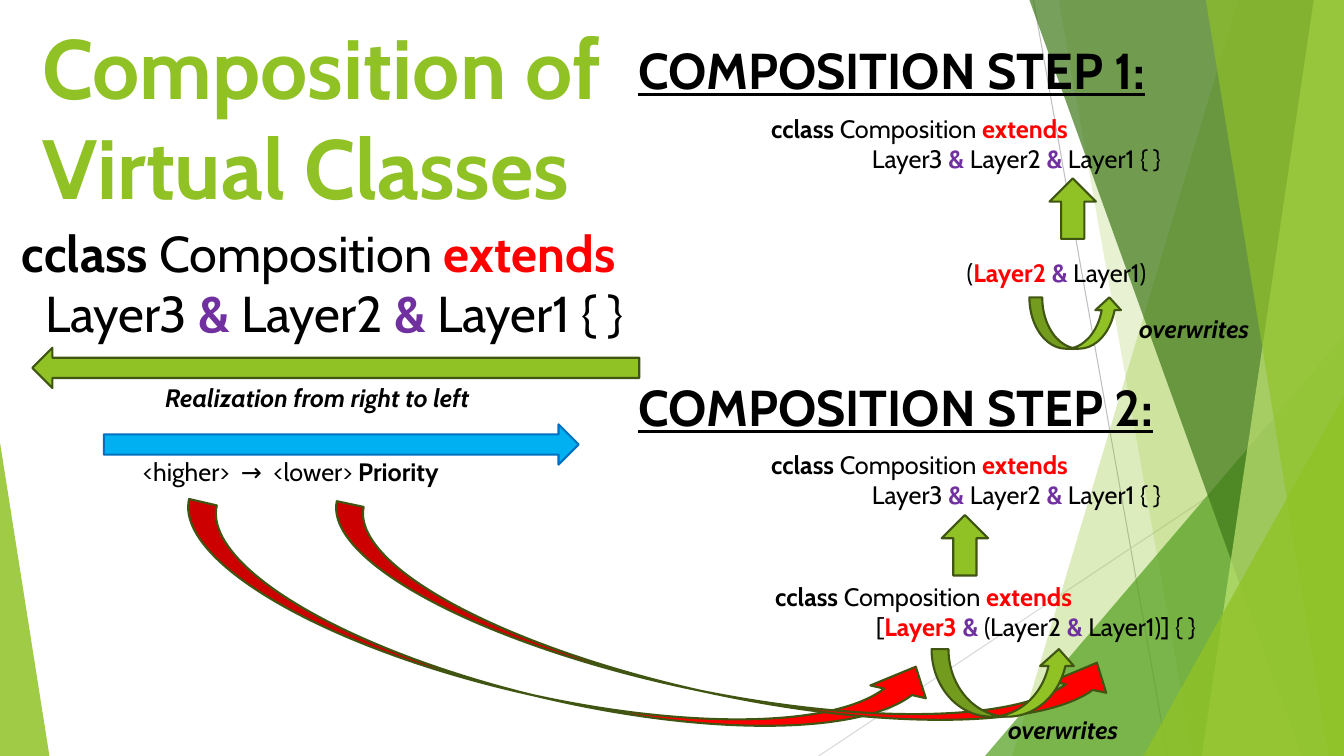
from dataclasses import dataclass

from lxml import etree
from pptx import Presentation
from pptx.dml.color import RGBColor
from pptx.enum.shapes import MSO_CONNECTOR, MSO_SHAPE
from pptx.enum.text import MSO_ANCHOR, MSO_AUTO_SIZE, PP_ALIGN
from pptx.oxml.ns import qn
from pptx.util import Inches, Pt

STRAIGHT = MSO_CONNECTOR.STRAIGHT
TRIANGLE = MSO_SHAPE.ISOSCELES_TRIANGLE
LEFT_ARROW = MSO_SHAPE.LEFT_ARROW
RIGHT_ARROW = MSO_SHAPE.RIGHT_ARROW
UP_ARROW = MSO_SHAPE.UP_ARROW
CURVED_ARROW = MSO_SHAPE.CURVED_UP_ARROW
TOP, LEFT = MSO_ANCHOR.TOP, PP_ALIGN.LEFT
FIT_SHAPE, NO_FIT = MSO_AUTO_SIZE.SHAPE_TO_FIT_TEXT, MSO_AUTO_SIZE.NONE

WIDTH, HEIGHT = 13.33, 7.5
TITLE_ONLY = 5


@dataclass(frozen=True)
class Theme:
    font: str = "Cabin"
    title_size: int = 60
    heading_size: int = 36
    body_size: int = 18
    green: str = "90C226"
    green_line: str = "3F5511"
    mid_green: str = "54A021"
    dark_green: str = "3F7819"
    pale_green: str = "C0E474"
    blue: str = "00B0F0"
    blue_line: str = "0070C0"
    red: str = "FF0000"
    purple: str = "7030A0"
    black: str = "000000"
    gray: str = "BFBFBF"
    light_gray: str = "D9D9D9"


THEME = Theme()

# Runs are (text, colour, bold)
AND = ("&", THEME.purple, True)
CLASS_LINE = [("cclass ", THEME.black, True), ("Composition ", THEME.black, False),
              ("extends", THEME.red, True)]
LAYERS_LINE = [("Layer3 ", THEME.black, False), AND, (" Layer2 ", THEME.black, False),
               AND, (" Layer1 { }", THEME.black, False)]
MERGED_LINE = [("[", THEME.black, False), ("Layer3 ", THEME.red, True),
               ("& ", THEME.purple, True), ("(Layer2 ", THEME.black, False), AND,
               (" Layer1)] { }", THEME.black, False)]
PAIR_LINE = [("(", THEME.black, False), ("Layer2 ", THEME.red, True), AND,
             (" Layer1)", THEME.black, False)]


def inches(*lengths):
    return [Inches(length) for length in lengths]


def add_runs(paragraph, runs, size, italic=False, underline=False):
    for text, color, bold in runs:
        run = paragraph.add_run()
        run.text = text
        font = run.font
        font.name, font.size, font.bold = THEME.font, Pt(size), bold
        font.italic, font.underline = italic, underline
        font.color.rgb = RGBColor.from_string(color)


def add_text(slide, box, lines, size=THEME.body_size, indent=0, **style):
    """Add a text box whose second and later lines are indented."""
    frame = slide.shapes.add_textbox(*inches(*box)).text_frame
    frame.word_wrap, frame.auto_size = True, FIT_SHAPE
    for index, runs in enumerate(lines):
        paragraph = frame.add_paragraph() if index else frame.paragraphs[0]
        if index and indent:
            paragraph._p.get_or_add_pPr().set("marL", str(Inches(indent)))
        add_runs(paragraph, runs, size, **style)


def add_arrow(slide, kind, box, fill=THEME.green, line=THEME.green_line, rotation=0):
    shape = slide.shapes.add_shape(kind, *inches(*box))
    shape.shadow.inherit = False
    shape.rotation = rotation
    shape.fill.solid()
    shape.fill.fore_color.rgb = RGBColor.from_string(fill)
    shape.line.color.rgb = RGBColor.from_string(line)
    shape.line.width = Pt(1.5)


# Background facets
def paint_glass(shape, color, opacity):
    shape.shadow.inherit = False
    shape.fill.solid()
    shape.fill.fore_color.rgb = RGBColor.from_string(color)
    shape.line.fill.background()
    color_element = shape.fill._xPr.find(qn("a:solidFill"))[0]
    etree.SubElement(color_element, qn("a:alpha")).set("val", str(opacity * 1000))


def add_ray(slide, start, end, color):
    ray = slide.shapes.add_connector(STRAIGHT, *inches(*start, *end))
    ray.line.color.rgb = RGBColor.from_string(color)
    ray.line.width = Pt(0.75)
    etree.SubElement(ray._element.spPr, qn("a:effectLst"))


def add_facet(slide, top_x, bottom_x, color, opacity):
    """Fill from a slanted left edge to the right side of the slide."""
    builder = slide.shapes.build_freeform(*inches(top_x, 0), scale=1.0)
    corners = [(WIDTH, 0), (WIDTH, HEIGHT), (bottom_x, HEIGHT)]
    builder.add_line_segments([inches(*corner) for corner in corners], close=True)
    paint_glass(builder.convert_to_shape(), color, opacity)


def add_corner(slide, left, width, height, peak, color, opacity):
    """Stand a right triangle on the bottom edge of the slide."""
    shape = slide.shapes.add_shape(TRIANGLE, *inches(left, HEIGHT - height, width, height))
    shape.adjustments[0] = peak
    paint_glass(shape, color, opacity)


def add_background(slide):
    add_ray(slide, (10.25, 0), (11.58, HEIGHT), THEME.gray)
    add_ray(slide, (WIDTH, 4.03), (8.12, HEIGHT), THEME.light_gray)
    add_facet(slide, 12.28, 10.04, THEME.green, 30)
    add_facet(slide, 10.5, 11.83, THEME.green, 20)
    add_corner(slide, 9.77, 3.56, 4.17, 1, THEME.mid_green, 72)
    add_facet(slide, 10.21, 12.91, THEME.dark_green, 70)
    add_facet(slide, 13.03, 11.92, THEME.pale_green, 70)
    add_facet(slide, 11.96, 13.18, THEME.green, 65)
    add_corner(slide, 11.34, 1.99, 3.57, 1, THEME.green, 80)
    add_corner(slide, 0, 0.49, 3.11, 0, THEME.green, 85)


def add_title(slide, box):
    title = slide.shapes.title
    title.left, title.top, title.width, title.height = inches(*box)
    frame = title.text_frame
    frame.word_wrap, frame.auto_size, frame.vertical_anchor = True, NO_FIT, TOP
    paragraph = frame.paragraphs[0]
    paragraph.alignment, paragraph.line_spacing = LEFT, 1.0
    add_runs(paragraph, [("Composition of Virtual Classes", THEME.green, True)],
             THEME.title_size)


# Left side: declaration, direction and priority
def add_declaration(slide, left, top):
    add_text(slide, (left, top, 8.16, 1.31), [CLASS_LINE, LAYERS_LINE],
             THEME.heading_size, indent=0.23)
    add_arrow(slide, LEFT_ARROW, (left + 0.2, top + 1.3, 6.02, 0.4))
    add_text(slide, (left + 1.42, top + 1.59, 3.71, 0.4),
             [[("Realization from right to left", THEME.black, True)]], italic=True)
    add_arrow(slide, RIGHT_ARROW, (left + 0.91, top + 2.06, 4.71, 0.4),
              THEME.blue, THEME.blue_line)
    add_text(slide, (left + 1.2, top + 2.33, 3.6, 0.4),
             [[("<higher>  →  <lower> ", THEME.black, False),
               ("Priority", THEME.black, True)]])


# Right side: the two composition steps
def add_step(slide, left, top, number, arrow_offset):
    add_text(slide, (left, top, 5.36, 0.71),
             [[(f"COMPOSITION STEP {number}:", THEME.black, True)]],
             THEME.heading_size, underline=True)
    add_text(slide, (left + 1.32, top + 0.73, 5.34, 0.71), [CLASS_LINE, LAYERS_LINE],
             indent=1)
    add_arrow(slide, UP_ARROW, (left + arrow_offset, top + 1.43, 0.46, 0.6))


def add_overwrites(slide, left, top):
    add_text(slide, (left, top, 1.49, 0.4), [[("overwrites", THEME.black, True)]],
             italic=True)


def add_first_step(slide, left, top):
    add_step(slide, left, top, 1, 4.18)
    add_text(slide, (left + 3.26, top + 2.16, 3.6, 0.4), [PAIR_LINE])
    add_arrow(slide, CURVED_ARROW, (left + 3.98, top + 2.61, 0.92, 0.51))
    add_overwrites(slide, left + 4.97, top + 2.72)


def add_second_step(slide, left, top):
    add_step(slide, left, top, 2, 3.11)
    add_overwrites(slide, left + 3.67, top + 3.36)
    add_text(slide, (left + 1.36, top + 2.04, 5.34, 0.71), [CLASS_LINE, MERGED_LINE],
             indent=1)
    # Sweeps from the priority labels to the merged layers
    for box, rotation in (((1.65, 5.8, 7.68, 1.13), 13), ((3.14, 5.79, 7.98, 1.09), 12)):
        add_arrow(slide, CURVED_ARROW, box, THEME.red, rotation=rotation)
    add_arrow(slide, CURVED_ARROW, (left + 3.01, top + 2.76, 1.43, 0.67))


def main():
    presentation = Presentation()
    presentation.slide_width, presentation.slide_height = inches(WIDTH, HEIGHT)
    slide = presentation.slides.add_slide(presentation.slide_layouts[TITLE_ONLY])
    add_background(slide)
    add_title(slide, (0.32, 0.1, 6.46, 1.44))
    add_declaration(slide, 0.12, 2.15)
    add_first_step(slide, 6.23, 0.34)
    add_second_step(slide, 6.23, 3.68)
    presentation.save("out.pptx")


if __name__ == "__main__":
    main()
